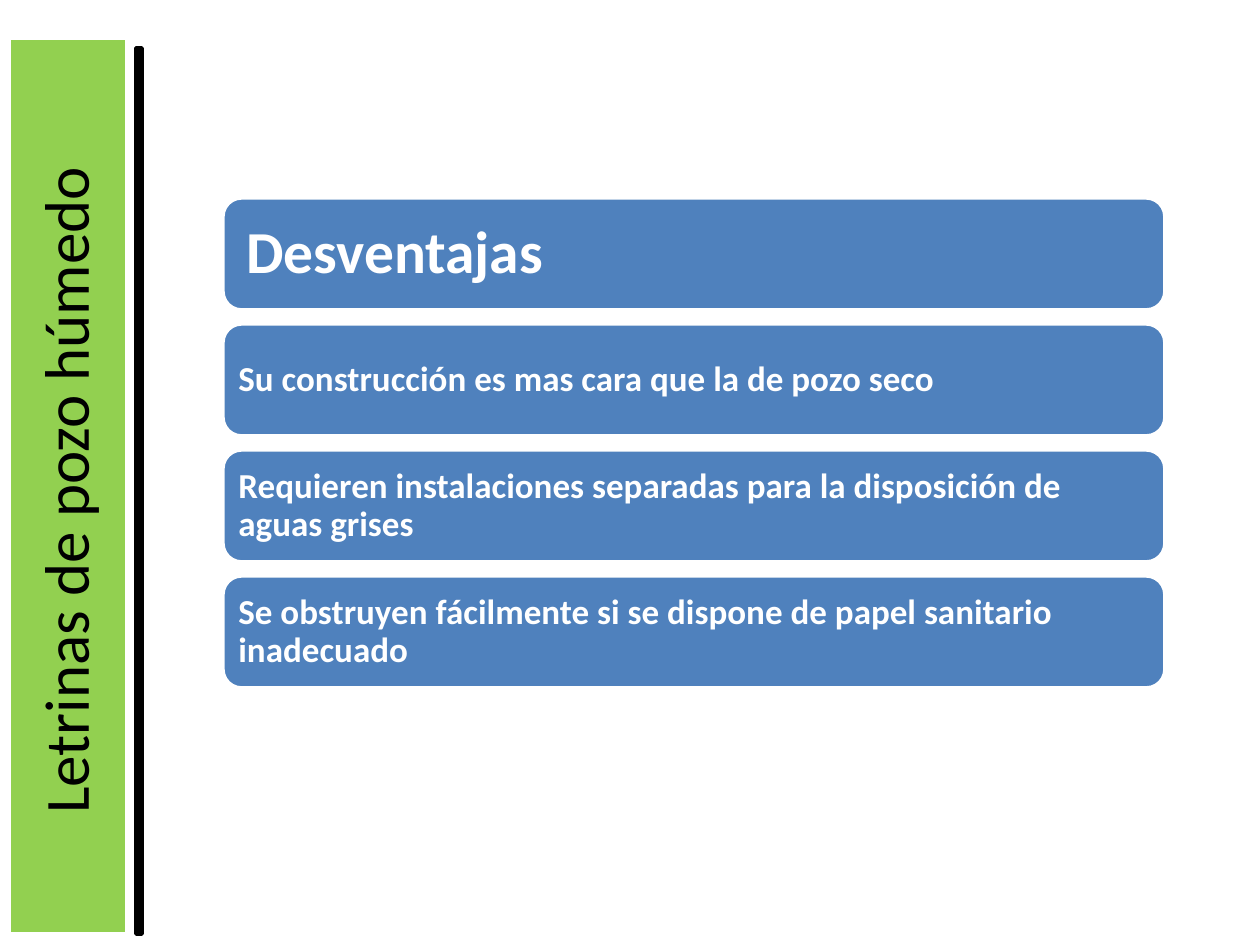
from dataclasses import dataclass

from pptx import Presentation
from pptx import util as u
from pptx.dml.color import RGBColor
from pptx.enum import shapes, text

SCALE = 914400 / 126
PANEL_LEFT, PANEL_TOP = 223, 198
PANEL_WIDTH, PANEL_HEIGHT, PANEL_PITCH = 942, 112, 126


@dataclass
class Bar:
    left: int
    top: int
    width: int
    height: int
    fill: str
    line: str


@dataclass
class Panel:
    words: str
    size: int = 20
    inset: int = 10


BARS = [
    Bar(9, 38, 118, 896, "92D050", "FFFFFF"),
    Bar(136, 48, 6, 886, "000000", "000000"),
]
PANELS = [
    Panel("Desventajas", 34, 18),
    Panel("Su construcción es mas cara que la de pozo seco"),
    Panel("Requieren instalaciones separadas para la disposición de aguas grises"),
    Panel("Se obstruyen fácilmente si se dispone de papel sanitario inadecuado"),
]


def px(length: int) -> int:
    return round(length * SCALE)


def color(value: str) -> RGBColor:
    return RGBColor.from_string(value)


def apply(target, values: dict) -> None:
    for name, value in values.items():
        setattr(target, name, value)


def draw_bar(page, bar: Bar, kind=shapes.MSO_SHAPE.RECTANGLE):
    box = page.shapes.add_shape(
        kind, px(bar.left), px(bar.top), px(bar.width), px(bar.height)
    )
    box.shadow.inherit = False
    box.fill.solid()
    box.fill.fore_color.rgb = color(bar.fill)
    box.line.color.rgb = color(bar.line)
    box.line.width = u.Pt(2)
    return box


def write(box, words: str, size: int, ink: str, bold: bool, para_format: dict) -> None:
    para = box.text_frame.paragraphs[0]
    apply(para, para_format)
    span = para.add_run()
    span.text = words
    apply(span.font, {"name": "Calibri", "size": u.Pt(size), "bold": bold})
    span.font.color.rgb = color(ink)


def draw_panel(page, panel: Panel, row: int) -> None:
    frame = Bar(
        PANEL_LEFT, PANEL_TOP + row * PANEL_PITCH, PANEL_WIDTH, PANEL_HEIGHT,
        "4F81BD", "FFFFFF",
    )
    box = draw_bar(page, frame, shapes.MSO_SHAPE.ROUNDED_RECTANGLE)
    inset = px(panel.inset)
    apply(box.text_frame, {
        "word_wrap": True,
        "vertical_anchor": text.MSO_ANCHOR.MIDDLE,
        "margin_left": inset,
        "margin_right": inset,
        "margin_top": inset,
        "margin_bottom": inset,
    })
    write(box, panel.words, panel.size, "FFFFFF", True,
          {"alignment": text.PP_ALIGN.LEFT, "line_spacing": 0.9})


def draw_title(page, words: str) -> None:
    box = page.shapes.title
    apply(box, {
        "left": px(-318), "top": px(408), "width": px(840), "height": px(165),
        "rotation": 270,
    })
    apply(box.text_frame, {
        "word_wrap": True,
        "auto_size": text.MSO_AUTO_SIZE.NONE,
        "vertical_anchor": text.MSO_ANCHOR.TOP,
    })
    write(box, words, 36, "000000", False, {"alignment": text.PP_ALIGN.CENTER})
    box.element.getparent().append(box.element)


def main() -> None:
    deck = Presentation()
    apply(deck, {"slide_width": px(1260), "slide_height": px(945)})
    page = deck.slides.add_slide(deck.slide_layouts[5])
    for bar in BARS:
        draw_bar(page, bar)
    draw_title(page, "Letrinas de pozo húmedo")
    for row, panel in enumerate(PANELS):
        draw_panel(page, panel, row)
    deck.save("out.pptx")


if __name__ == "__main__":
    main()
